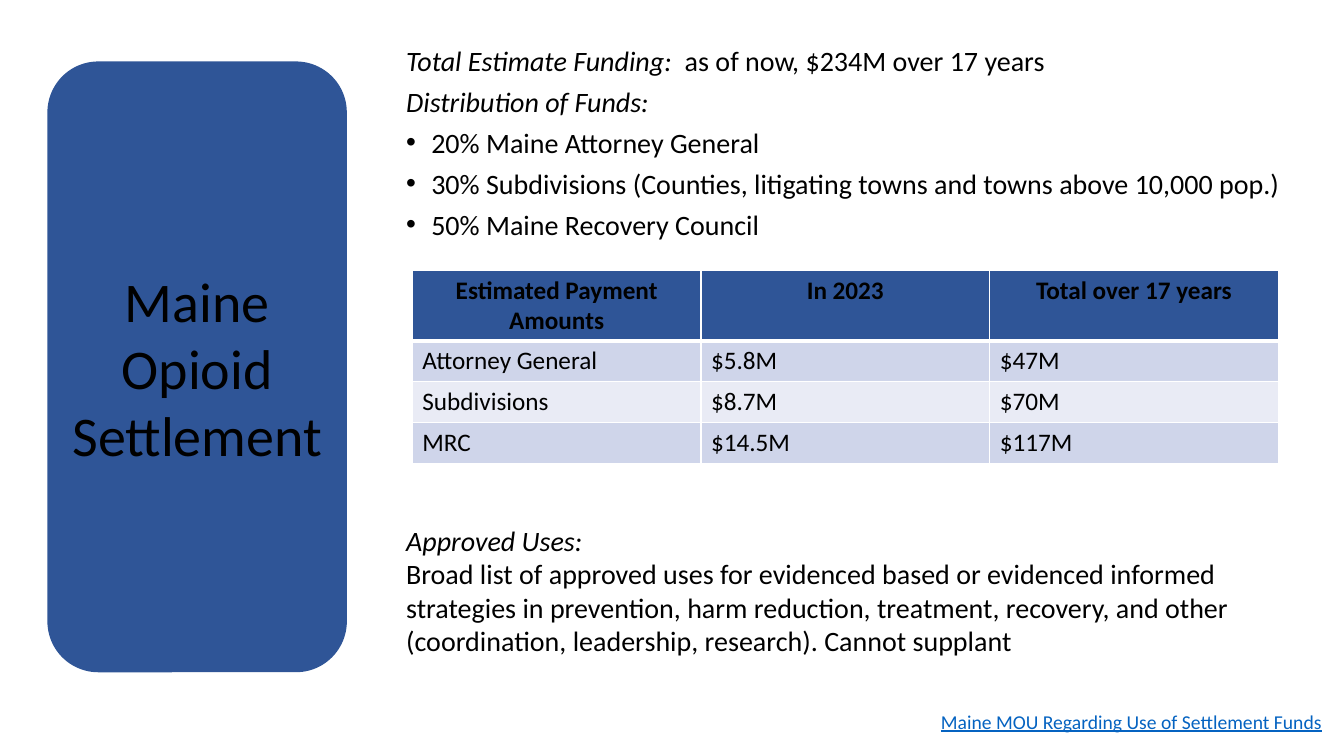
from dataclasses import dataclass

import pptx
import pptx.dml.color
import pptx.enum.shapes
import pptx.enum.text
import pptx.oxml
import pptx.oxml.ns
import pptx.util

RGBColor = pptx.dml.color.RGBColor
BLACK = RGBColor(0x00, 0x00, 0x00)
WHITE = RGBColor(0xFF, 0xFF, 0xFF)
NAVY = RGBColor(0x2F, 0x55, 0x97)
LINK_BLUE = RGBColor(0x05, 0x63, 0xC1)
BAND_DARK = RGBColor(0xCF, 0xD5, 0xEA)
BAND_LIGHT = RGBColor(0xE9, 0xEB, 0xF5)

FONT = "Calibri"
SLIDE_W = pptx.util.Inches(13.33)
SLIDE_H = pptx.util.Inches(7.5)
CENTER = pptx.enum.text.PP_ALIGN.CENTER


def col(n: float) -> int:
    return round(SLIDE_W * n / 100)


def row(n: float) -> int:
    return round(SLIDE_H * n / 100)


@dataclass(frozen=True)
class Box:
    left: float
    top: float
    width: float
    height: float

    def emu(self) -> tuple[int, int, int, int]:
        return col(self.left), row(self.top), col(self.width), row(self.height)


@dataclass(frozen=True)
class Run:
    text: str
    size: float = 20
    italic: bool = False
    bold: bool = False
    underline: bool = False
    color: RGBColor = BLACK


@dataclass(frozen=True)
class Para:
    runs: tuple[Run, ...]
    bullet: bool = False


@dataclass(frozen=True)
class TextBlock:
    box: Box
    paras: tuple[Para, ...]
    line_spacing: float = 1.0
    space_before: float = 0


PANEL = Box(3.53, 8.13, 22.28, 80.8)
TABLE = Box(30.68, 35.73, 64.44, 25.6)
HEADER_ROWS = 9.33

BLOCKS = (
    TextBlock(
        Box(29.48, 6, 69.62, 27.33),
        (
            Para((
                Run("Total Estimate Funding:  ", italic=True),
                Run("as of now, $234M over 17 years"),
            )),
            Para((Run("Distribution of Funds:", italic=True),)),
            Para((Run("20% Maine Attorney General"),), bullet=True),
            Para((Run("30% Subdivisions (Counties, litigating towns and towns above 10,000 pop.)"),), bullet=True),
            Para((Run("50% Maine Recovery Council"),), bullet=True),
        ),
        line_spacing=0.8,
        space_before=10,
    ),
    TextBlock(
        Box(68.94, 93.2, 31.06, 4.53),
        (
            Para((
                Run(" ", size=14),
                Run("Maine MOU Regarding Use of Settlement Funds", size=14, underline=True, color=LINK_BLUE),
            )),
        ),
    ),
    TextBlock(
        Box(29.48, 68.53, 66.77, 19.33),
        (
            Para((Run("Approved Uses:", italic=True),)),
            Para((Run(
                "Broad list of approved uses for evidenced based or evidenced informed "
                "strategies in prevention, harm reduction, treatment, recovery, and other "
                "(coordination, leadership, research). Cannot supplant"
            ),)),
        ),
    ),
)

PAYMENTS = (
    ("Estimated Payment Amounts", "In 2023", "Total over 17 years"),
    ("Attorney General", "$5.8M", "$47M"),
    ("Subdivisions", "$8.7M", "$70M"),
    ("MRC", "$14.5M", "$117M"),
)


def add_run(p, run: Run) -> None:
    r = p.add_run()
    r.text = run.text
    f = r.font
    f.name = FONT
    f.size = pptx.util.Pt(run.size)
    f.italic = run.italic
    f.bold = run.bold
    f.underline = run.underline
    f.color.rgb = run.color


def set_bullet(p) -> None:
    pPr = p._p.get_or_add_pPr()
    indent = pptx.util.Inches(0.25)
    pPr.set("marL", str(indent))
    pPr.set("indent", str(-indent))
    ns = pptx.oxml.ns.nsdecls("a")
    pPr.append(pptx.oxml.parse_xml(f'<a:buFont {ns} typeface="Arial"/>'))
    pPr.append(pptx.oxml.parse_xml(f'<a:buChar {ns} char="•"/>'))


def add_block(s, block: TextBlock) -> None:
    tf = s.shapes.add_textbox(*block.box.emu()).text_frame
    tf.word_wrap = True
    for i, para in enumerate(block.paras):
        p = tf.add_paragraph() if i else tf.paragraphs[0]
        p.line_spacing = block.line_spacing
        p.space_before = pptx.util.Pt(block.space_before)
        if para.bullet:
            set_bullet(p)
        for run in para.runs:
            add_run(p, run)


def add_title(s) -> None:
    sp = s.shapes.add_shape(pptx.enum.shapes.MSO_SHAPE.ROUNDED_RECTANGLE, *PANEL.emu())
    sp.adjustments[0] = 0.17
    sp.shadow.inherit = False
    sp.fill.solid()
    sp.fill.fore_color.rgb = NAVY
    sp.line.fill.background()

    title = s.shapes.title
    title.left, title.top, title.width, title.height = PANEL.emu()
    s.shapes._spTree.append(title._element)
    tf = title.text_frame
    tf.word_wrap = True
    tf.auto_size = pptx.enum.text.MSO_AUTO_SIZE.NONE
    tf.vertical_anchor = pptx.enum.text.MSO_ANCHOR.MIDDLE
    p = tf.paragraphs[0]
    p.alignment = CENTER
    add_run(p, Run("Maine Opioid Settlement", size=40))


def set_borders(cell, top: float, bottom: float) -> None:
    tcPr = cell._tc.get_or_add_tcPr()
    for side, width in (("L", 1), ("R", 1), ("T", top), ("B", bottom)):
        tcPr.append(pptx.oxml.parse_xml(
            f'<a:ln{side} {pptx.oxml.ns.nsdecls("a")} w="{pptx.util.Pt(width)}">'
            f'<a:solidFill><a:srgbClr val="{WHITE}"/></a:solidFill></a:ln{side}>'
        ))


def add_payments(s) -> None:
    n_rows, n_cols = len(PAYMENTS), len(PAYMENTS[0])
    table = s.shapes.add_table(n_rows, n_cols, *TABLE.emu()).table
    for column in table.columns:
        column.width = col(TABLE.width / n_cols)
    for i, texts in enumerate(PAYMENTS):
        header = i == 0
        body_rows = (TABLE.height - HEADER_ROWS) / (n_rows - 1)
        table.rows[i].height = row(HEADER_ROWS if header else body_rows)
        for j, text in enumerate(texts):
            cell = table.cell(i, j)
            set_borders(cell, 3 if i == 1 else 1, 3 if header else 1)
            cell.fill.solid()
            cell.fill.fore_color.rgb = NAVY if header else (BAND_LIGHT, BAND_DARK)[i % 2]
            p = cell.text_frame.paragraphs[0]
            if header:
                p.alignment = CENTER
            add_run(p, Run(text, size=18, bold=header))


def main() -> None:
    prs = pptx.Presentation()
    prs.slide_width, prs.slide_height = SLIDE_W, SLIDE_H
    s = prs.slides.add_slide(prs.slide_layouts[5])
    add_title(s)
    for block in BLOCKS:
        add_block(s, block)
    add_payments(s)
    prs.save("out.pptx")


if __name__ == "__main__":
    main()
